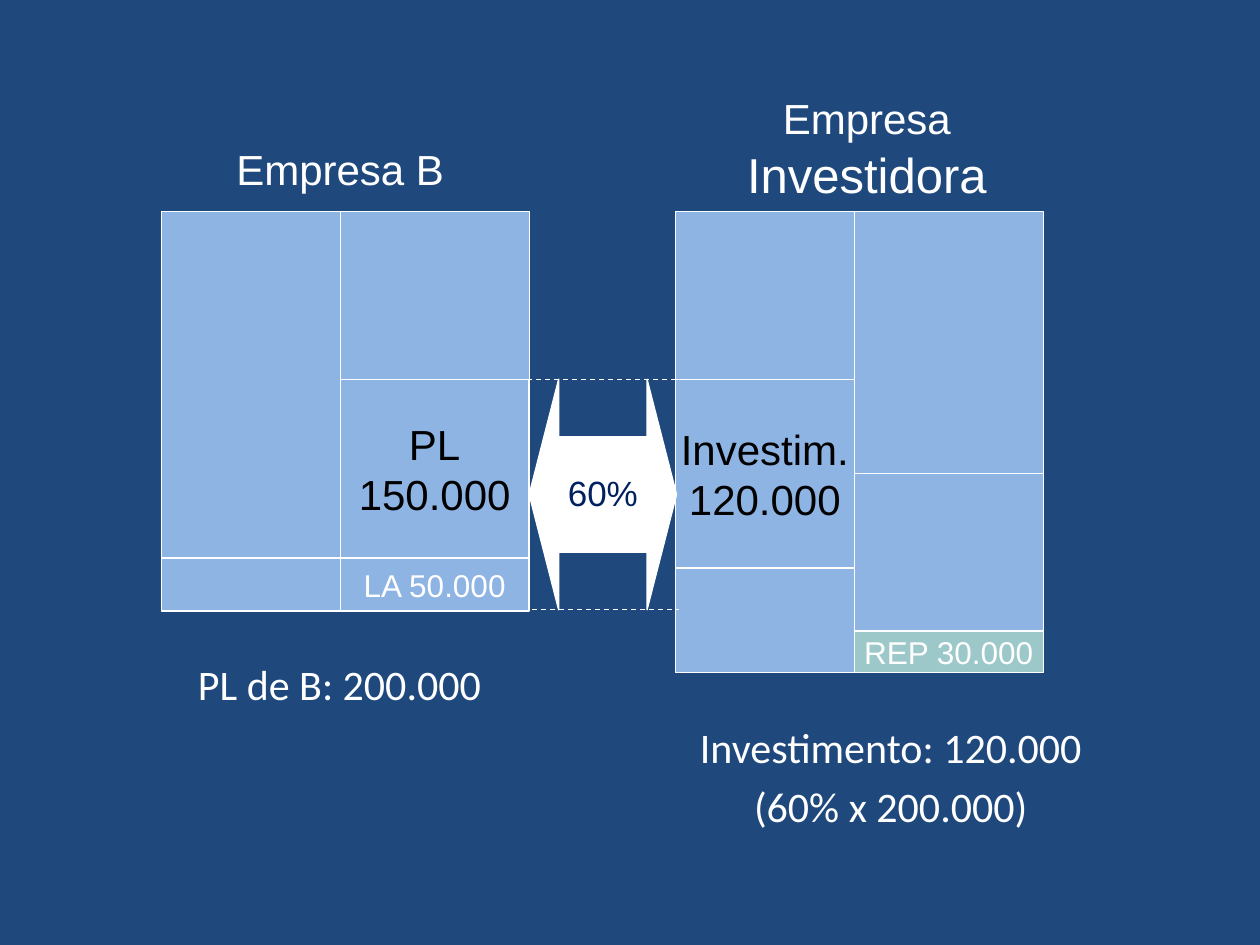
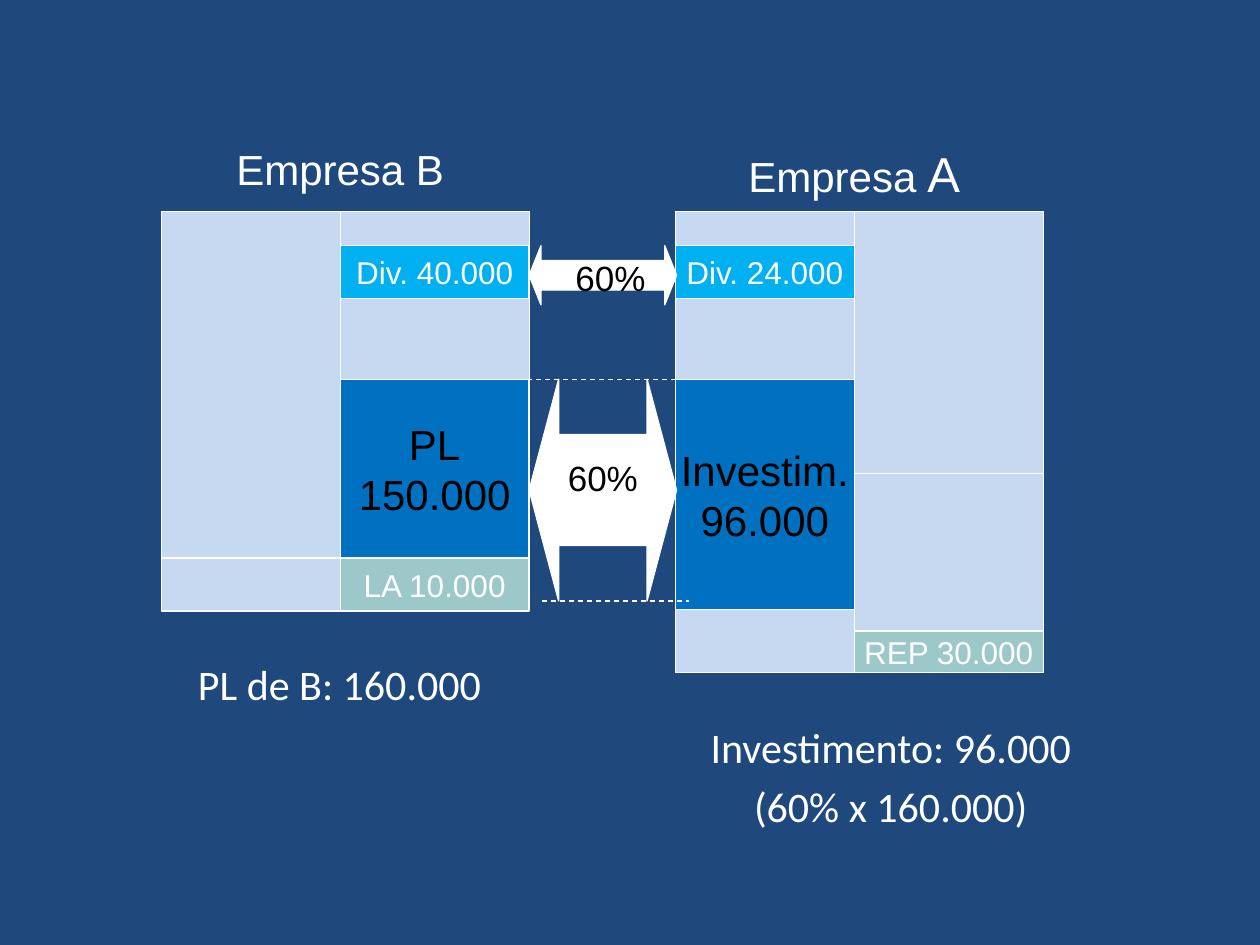
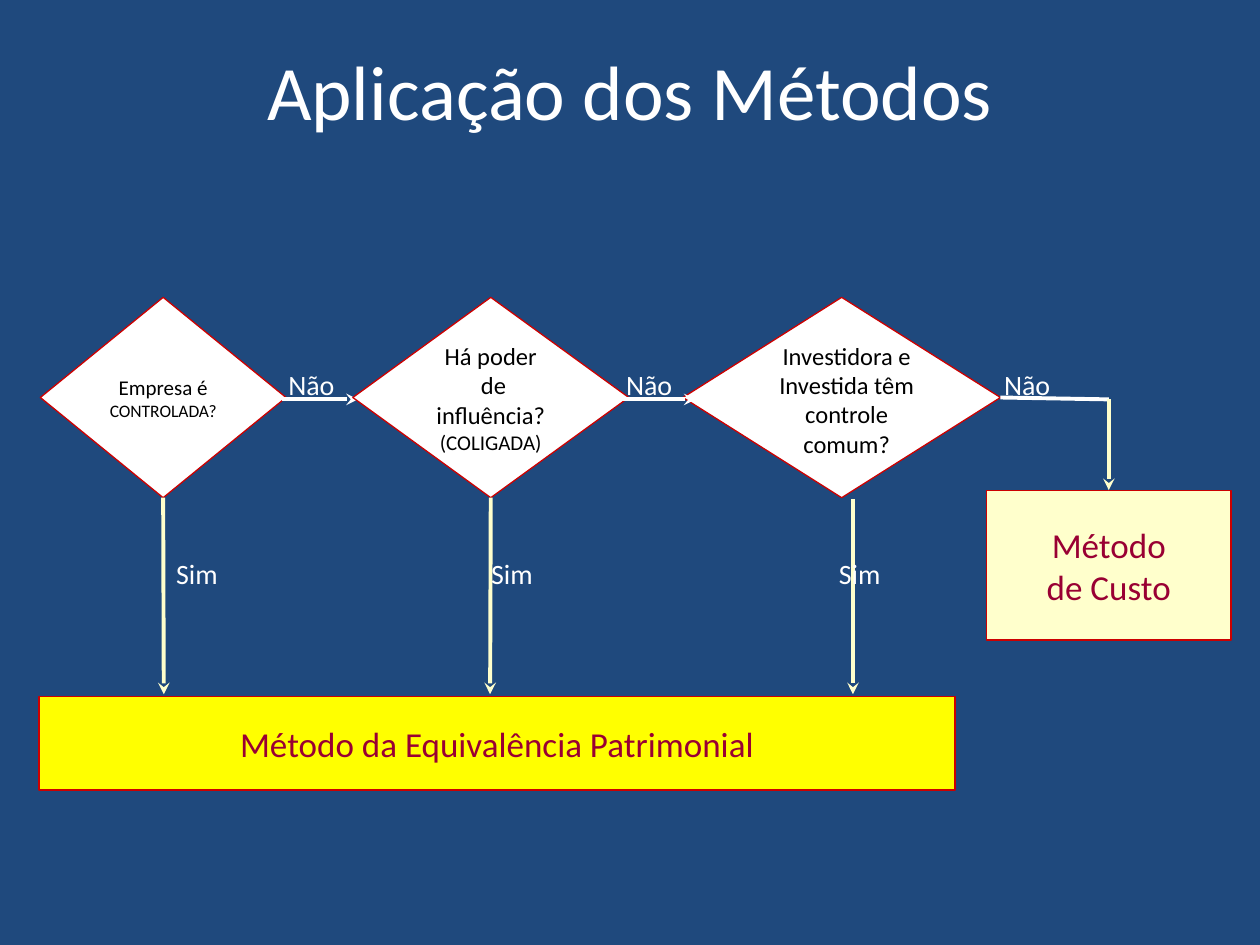
from dataclasses import dataclass

from lxml import etree
from pptx import Presentation
from pptx.dml.color import RGBColor
from pptx.enum.dml import MSO_LINE
from pptx.enum.shapes import MSO_CONNECTOR, MSO_SHAPE
from pptx.enum.text import MSO_ANCHOR, MSO_AUTO_SIZE, PP_ALIGN
from pptx.oxml.ns import qn
from pptx.util import Pt

PX = 9144  # 100 px to the inch
RECT = MSO_SHAPE.RECTANGLE
DECISION = MSO_SHAPE.FLOWCHART_DECISION
DOUBLE_ARROW = MSO_SHAPE.LEFT_RIGHT_ARROW
STRAIGHT = MSO_CONNECTOR.STRAIGHT
DASH = MSO_LINE.DASH
MIDDLE = MSO_ANCHOR.MIDDLE
GROW = MSO_AUTO_SIZE.SHAPE_TO_FIT_TEXT
CENTER, LEFT = PP_ALIGN.CENTER, PP_ALIGN.LEFT
TOP_SIDE, BOTTOM_SIDE, RIGHT_SIDE = 0, 2, 3


class Theme:
    background = "1F497D"
    white, black, navy = "FFFFFF", "000000", "002060"
    sheet, pale_sheet = "8EB4E3", "C6D9F1"
    equity, dividend, result = "0070C0", "00B0F0", "9DC8C9"
    outline, wine = "CC0000", "990033"
    yellow, cream = "FFFF00", "FFFFCC"
    diagram_font, body_font = "Arial", "Calibri"
    title, large, heading, method = 44, 28, 24, 20
    entry, answer, question, note, fine = 18, 16, 14, 12, 10
    thin, thick = 0.75, 2.25


@dataclass
class Box:
    left: int
    top: int
    width: int
    height: int

    def emu(self):
        return [v * PX for v in (self.left, self.top, self.width, self.height)]

    def inner(self, left, top, width, height):
        return Box(self.left + left, self.top + top, width, height)


def rgb(code):
    return RGBColor.from_string(code)


def write(shape, lines, color, font, align=CENTER, before=0):
    """Each line is a list of (text, size) runs; before is a percentage."""
    frame = shape.text_frame
    for index, runs in enumerate(lines):
        paragraph = frame.paragraphs[0] if index == 0 else frame.add_paragraph()
        paragraph.alignment = align
        if before:
            space = etree.SubElement(paragraph._p.get_or_add_pPr(), qn("a:spcBef"))
            etree.SubElement(space, qn("a:spcPct")).set("val", str(before * 1000))
        for text, size in runs:
            run = paragraph.add_run()
            run.text = text
            run.font.size = Pt(size)
            run.font.name = font
            run.font.color.rgb = rgb(color)


def add_text(slide, box, lines, font, align=CENTER, before=50, color=Theme.white, grow=True):
    label = slide.shapes.add_textbox(*box.emu())
    label.text_frame.word_wrap = True
    if grow:
        label.text_frame.auto_size = GROW
    write(label, lines, color, font, align, before)


def add_block(slide, box, fill, kind=RECT, outline=Theme.white):
    block = slide.shapes.add_shape(kind, *box.emu())
    block.shadow.inherit = False
    block.fill.solid()
    block.fill.fore_color.rgb = rgb(fill)
    block.line.color.rgb = rgb(outline)
    block.line.width = Pt(Theme.thin)
    block.text_frame.vertical_anchor = MIDDLE
    return block


def add_line(slide, start, end, color=Theme.white, width=Theme.thin, dashed=False, arrow=False):
    line = slide.shapes.add_connector(STRAIGHT, *[v * PX for v in (*start, *end)])
    line.line.color.rgb = rgb(color)
    line.line.width = Pt(width)
    if dashed:
        line.line.dash_style = DASH
    properties = line._element.spPr
    if arrow:
        outline = properties.find(qn("a:ln"))
        etree.SubElement(outline, qn("a:tailEnd")).set("type", "stealth")
    etree.SubElement(properties, qn("a:effectLst"))
    return line


def new_slide(deck):
    slide = deck.slides.add_slide(deck.slide_layouts[6])
    slide.background.fill.solid()
    slide.background.fill.fore_color.rgb = rgb(Theme.background)
    return slide


@dataclass
class Entry:
    """A block in one column of a balance sheet, measured from its top."""
    column: int
    top: int
    height: int
    fill: str
    lines: tuple = ()
    size: int = Theme.entry
    color: str = Theme.white


def balance_sheet(slide, box, fill, entries, rule=None):
    columns = ((0, 142), (142, box.width - 142))
    split = box.left + 142
    add_block(slide, box, fill)
    add_line(slide, (split, box.top), (split, box.top + box.height))
    if rule:
        add_line(slide, (split, box.top + rule), (box.left + box.width, box.top + rule))
    for entry in entries:
        left, width = columns[entry.column]
        block = add_block(slide, box.inner(left, entry.top, width, entry.height), entry.fill)
        block.text_frame.word_wrap = False
        write(block, [[(line, entry.size)] for line in entry.lines],
              entry.color, Theme.diagram_font)


def share_arrow(slide, box, label_left, label_top, color):
    arrow = add_block(slide, box, Theme.white, DOUBLE_ARROW)
    arrow.adjustments[0], arrow.adjustments[1] = 0.5, 0.2
    add_text(slide, box.inner(label_left, label_top, 81, 44), [[("60%", Theme.method)]],
             Theme.diagram_font, color=color)


@dataclass
class Scenario:
    fill: str
    equity_fill: str
    profit_fill: str
    profit: str
    equity_total: str
    investment: str
    investment_height: int
    investor: str
    investor_box: Box
    share_height: int
    share_label_top: int
    share_color: str
    lower_dash_left: int
    dividends: tuple = ()


def equity_slide(deck, case):
    slide = new_slide(deck)
    investee, investor = Box(128, 168, 292, 275), Box(536, 168, 292, 333)
    gap = Box(420, 168, 117, 275)
    equity_top = 133
    amount = {"size": Theme.heading, "color": Theme.black}
    rest_top = equity_top + case.investment_height
    investee_entries = [
        Entry(1, equity_top, 142, case.equity_fill, ("PL", "150.000"), **amount),
        Entry(0, 275, 42, case.fill),
        Entry(1, 275, 42, case.profit_fill, (f"LA {case.profit}",)),
    ]
    investor_entries = [
        Entry(0, equity_top, case.investment_height, case.equity_fill,
              ("Investim.", case.investment), **amount),
        Entry(1, 333, 33, Theme.result, ("REP 30.000",)),
        Entry(0, rest_top, 366 - rest_top, case.fill),
    ]
    if case.dividends:
        paid, received = case.dividends
        investee_entries.append(Entry(1, 27, 42, Theme.dividend, (f"Div. {paid}",)))
        investor_entries.append(Entry(0, 27, 42, Theme.dividend, (f"Div. {received}",)))
    balance_sheet(slide, investee, case.fill, investee_entries)
    balance_sheet(slide, investor, case.fill, investor_entries, rule=208)

    dash_top = gap.top + equity_top
    dash_bottom = dash_top + case.share_height
    dash_left = case.lower_dash_left
    add_line(slide, (411, dash_top), (645, dash_top), dashed=True)
    add_line(slide, (dash_left, dash_bottom), (dash_left + 117, dash_bottom), dashed=True)
    share_arrow(slide, gap.inner(0, equity_top, gap.width, case.share_height),
                18, case.share_label_top, case.share_color)
    if case.dividends:
        share_arrow(slide, gap.inner(0, 27, gap.width, 47), 24, 4, Theme.black)

    add_text(slide, Box(170, 109, 200, 51), [[("Empresa B", Theme.heading)]], Theme.diagram_font)
    add_text(slide, case.investor_box,
             [[("Empresa", Theme.heading), (f" {case.investor}", Theme.large)]],
             Theme.diagram_font)
    captions = (
        (Box(78, 518, 383, 75), [f"PL de B: {case.equity_total}"]),
        (Box(478, 568, 458, 102),
         [f"Investimento: {case.investment}", f"(60% x {case.equity_total})"]),
    )
    for box, lines in captions:
        add_text(slide, box, [[(line, Theme.heading)] for line in lines],
                 Theme.body_font, before=20, grow=False)


def decision(slide, box, lines, insets):
    diamond = add_block(slide, box, Theme.white, DECISION, Theme.outline)
    frame = diamond.text_frame
    frame.word_wrap = True
    (frame.margin_left, frame.margin_top,
     frame.margin_right, frame.margin_bottom) = [v * PX for v in insets]
    write(diamond, [[line] for line in lines], Theme.black, Theme.body_font)
    return diamond


def method(slide, box, fill, lines):
    block = add_block(slide, box, fill, outline=Theme.outline)
    write(block, [[(line, Theme.method)] for line in lines], Theme.wine, Theme.body_font)
    return block


def answer(slide, left, top, text):
    add_text(slide, Box(left, top, 88, 37), [[(text, Theme.answer)]], Theme.body_font, LEFT)


def no_branch(slide, left, y):
    add_line(slide, (left, y), (left + 60, y), width=Theme.thick, arrow=True)
    answer(slide, left - 5, y - 30, "Não")


def methods_slide(deck):
    slide = new_slide(deck)
    row_top, row_height = 236, 159
    yes_top, yes_bottom, no_y = 396, 551, 317
    add_text(slide, Box(50, 30, 900, 125), [[("Aplicação dos Métodos", Theme.title)]],
             Theme.body_font, before=0, grow=False)
    controlled = decision(slide, Box(32, row_top, 195, row_height),
                          [("Empresa é", Theme.note), ("CONTROLADA?", Theme.fine)],
                          (4, 5, 4, 5))
    common = decision(slide, Box(542, row_top, 252, row_height),
                      [("Investidora e Investida têm controle comum?", Theme.question)],
                      (12, 31, 4, 28))
    method(slide, Box(31, 553, 727, 74), Theme.yellow, ["Método da Equivalência Patrimonial"])
    cost = method(slide, Box(783, 389, 194, 119), Theme.cream, ["Método", "de Custo"])

    no_branch(slide, 224, no_y)
    influence = decision(slide, Box(280, row_top, 219, row_height),
                         [("Há poder", Theme.question),
                          (" de influência?", Theme.question),
                          ("(COLIGADA)", Theme.note)], (4, 5, 4, 5))
    no_branch(slide, 492, no_y)

    for x, question, label_left in ((130, controlled, 130), (389, influence, 380),
                                    (677, None, 656)):
        arrow = add_line(slide, (x, yes_top), (x, yes_bottom), Theme.cream, Theme.thick, arrow=True)
        if question:
            arrow.begin_connect(question, BOTTOM_SIDE)
        answer(slide, label_left, 437, "Sim")

    corner = (880, no_y)
    across = add_line(slide, (794, no_y), corner, width=Theme.thick)
    across.begin_connect(common, RIGHT_SIDE)
    down = add_line(slide, corner, (880, 389), Theme.cream, Theme.thick, arrow=True)
    down.end_connect(cost, TOP_SIDE)
    answer(slide, 787, no_y - 30, "Não")


def main():
    deck = Presentation()
    deck.slide_width, deck.slide_height = 1000 * PX, 750 * PX
    equity_slide(deck, Scenario(
        fill=Theme.sheet, equity_fill=Theme.sheet, profit_fill=Theme.sheet,
        profit="50.000", equity_total="200.000",
        investment="120.000", investment_height=150,
        investor="Investidora", investor_box=Box(578, 63, 220, 104),
        share_height=183, share_label_top=68, share_color=Theme.navy, lower_dash_left=422))
    equity_slide(deck, Scenario(
        fill=Theme.pale_sheet, equity_fill=Theme.equity, profit_fill=Theme.result,
        profit="10.000", equity_total="160.000",
        investment="96.000", investment_height=183,
        investor="A", investor_box=Box(578, 109, 200, 57),
        share_height=176, share_label_top=56, share_color=Theme.black, lower_dash_left=430,
        dividends=("40.000", "24.000")))
    methods_slide(deck)
    deck.save("out.pptx")


if __name__ == "__main__":
    main()
